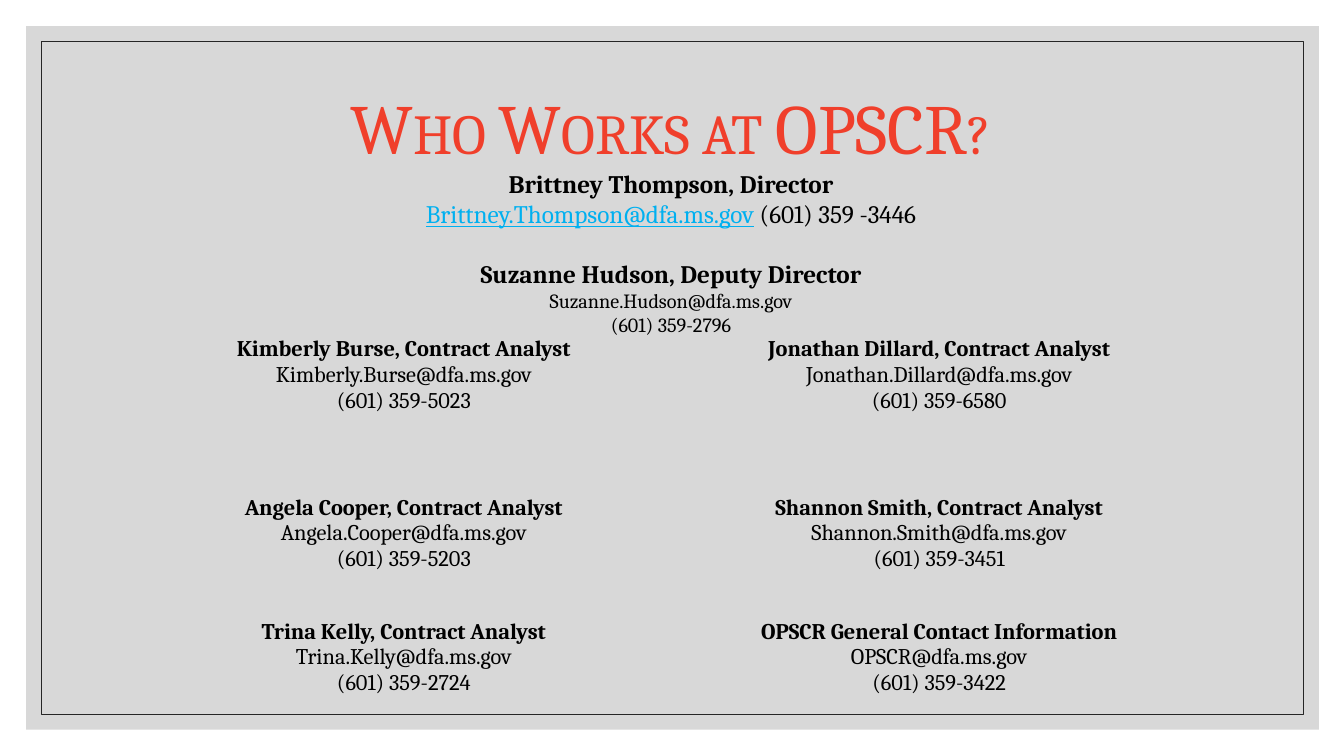
from dataclasses import dataclass

from lxml import etree
from pptx import Presentation
from pptx.dml.color import RGBColor
from pptx.enum.shapes import MSO_SHAPE
from pptx.enum.text import MSO_ANCHOR, PP_ALIGN
from pptx.oxml.ns import qn
from pptx.util import Pt

RECT = MSO_SHAPE.RECTANGLE
TOP = MSO_ANCHOR.TOP
CENTER = PP_ALIGN.CENTER

PX = 9144  # EMU in one px, 100 px to the inch
FONT = "Cambria"
PLAIN = "{2D5ABB26-0587-4C30-8999-92F81FD0307C}"  # no style, no grid
COLORS = {
    "panel": "BFBFBF",
    "frame": "262626",
    "title": "F03F2B",
    "text": "000000",
    "mail": "00B0F0",
}


@dataclass
class Run:
    text: str
    size: float
    color: str = "text"
    bold: bool = False
    under: bool = False
    caps: bool = False


@dataclass
class Line:
    runs: list[Run]
    before: float = 0


@dataclass
class Person:
    name: str
    mail: str
    phone: str


HEAD = [
    Line([Run("Who Works at OPSCR?", 50.4, "title", caps=True)]),
    Line([Run("Brittney Thompson, Director", 18, bold=True)]),
    Line([Run("Brittney.Thompson@dfa.ms.gov", 18, "mail", under=True),
          Run(" (601) 359 -3446", 18)]),
    Line([Run("Suzanne Hudson, Deputy Director", 18, bold=True)], before=21),
    Line([Run("Suzanne.Hudson@dfa.ms.gov", 14.4)]),
    Line([Run("(601) 359-2796", 14.4)]),
]

STAFF = [
    [Person("Kimberly Burse, Contract Analyst", "Kimberly.Burse@dfa.ms.gov", "(601) 359-5023"),
     Person("Jonathan Dillard, Contract Analyst", "Jonathan.Dillard@dfa.ms.gov", "(601) 359-6580")],
    [Person("Angela Cooper, Contract Analyst", "Angela.Cooper@dfa.ms.gov", "(601) 359-5203"),
     Person("Shannon Smith, Contract Analyst", "Shannon.Smith@dfa.ms.gov", "(601) 359-3451")],
    [Person("Trina Kelly, Contract Analyst", "Trina.Kelly@dfa.ms.gov", "(601) 359-2724"),
     Person("OPSCR General Contact Information", "OPSCR@dfa.ms.gov", "(601) 359-3422")],
]
COLS = [533, 529]
ROWS = [85, 157, 123, 157]


def paint(name: str) -> RGBColor:
    return RGBColor.from_string(COLORS[name])


def box(x: int, y: int, w: int, h: int) -> list[int]:
    return [n * PX for n in (x, y, w, h)]


def write(frame, lines: list[Line]) -> None:
    for i, line in enumerate(lines):
        para = frame.add_paragraph() if i else frame.paragraphs[0]
        para.alignment = CENTER
        para.space_before = Pt(line.before)
        for item in line.runs:
            run = para.add_run()
            run.text = item.text
            font = run.font
            font.name = FONT
            font.size = Pt(item.size)
            font.bold = item.bold
            font.underline = item.under
            font.color.rgb = paint(item.color)
            if item.caps:
                run._r.get_or_add_rPr().set("cap", "small")


def add_back(slide) -> None:
    """Draw the see-through panel and the thin frame inside it."""
    panel = slide.shapes.add_shape(RECT, *box(26, 26, 1282, 698))
    panel.shadow.inherit = False
    panel.fill.solid()
    panel.fill.fore_color.rgb = paint("panel")
    panel.line.fill.background()
    tint = panel._element.spPr.find(".//" + qn("a:srgbClr"))
    etree.SubElement(tint, qn("a:alpha")).set("val", "60000")

    frame = slide.shapes.add_shape(RECT, *box(41, 41, 1252, 668))
    frame.shadow.inherit = False
    frame.fill.background()
    frame.line.color.rgb = paint("frame")
    frame.line.width = Pt(0.5)


def add_head(slide) -> None:
    frame = slide.shapes.add_textbox(*box(26, 83, 1279, 250)).text_frame
    frame.word_wrap = True
    frame.vertical_anchor = TOP
    frame.margin_top = frame.margin_bottom = 0
    write(frame, HEAD)


def add_staff(slide) -> None:
    area = box(134, 244, sum(COLS), sum(ROWS))
    table = slide.shapes.add_table(len(ROWS), len(COLS), *area).table
    table.first_row = table.horz_banding = False
    table._tbl.tblPr.find(qn("a:tableStyleId")).text = PLAIN
    for col, wide in zip(table.columns, COLS):
        col.width = wide * PX
    for row, high in zip(table.rows, ROWS):
        row.height = high * PX
    for cell in table.iter_cells():
        cell.fill.background()
    for r, team in enumerate(STAFF, 1):
        for c, who in enumerate(team):
            write(table.cell(r, c).text_frame, [
                Line([Run(who.name, 16, bold=True)]),
                Line([Run(who.mail, 16)]),
                Line([Run(who.phone, 16)]),
            ])


def main() -> None:
    deck = Presentation()
    deck.slide_width, deck.slide_height = 1333 * PX, 750 * PX
    slide = deck.slides.add_slide(deck.slide_layouts[6])
    add_back(slide)
    add_head(slide)
    add_staff(slide)
    deck.save("out.pptx")


if __name__ == "__main__":
    main()
